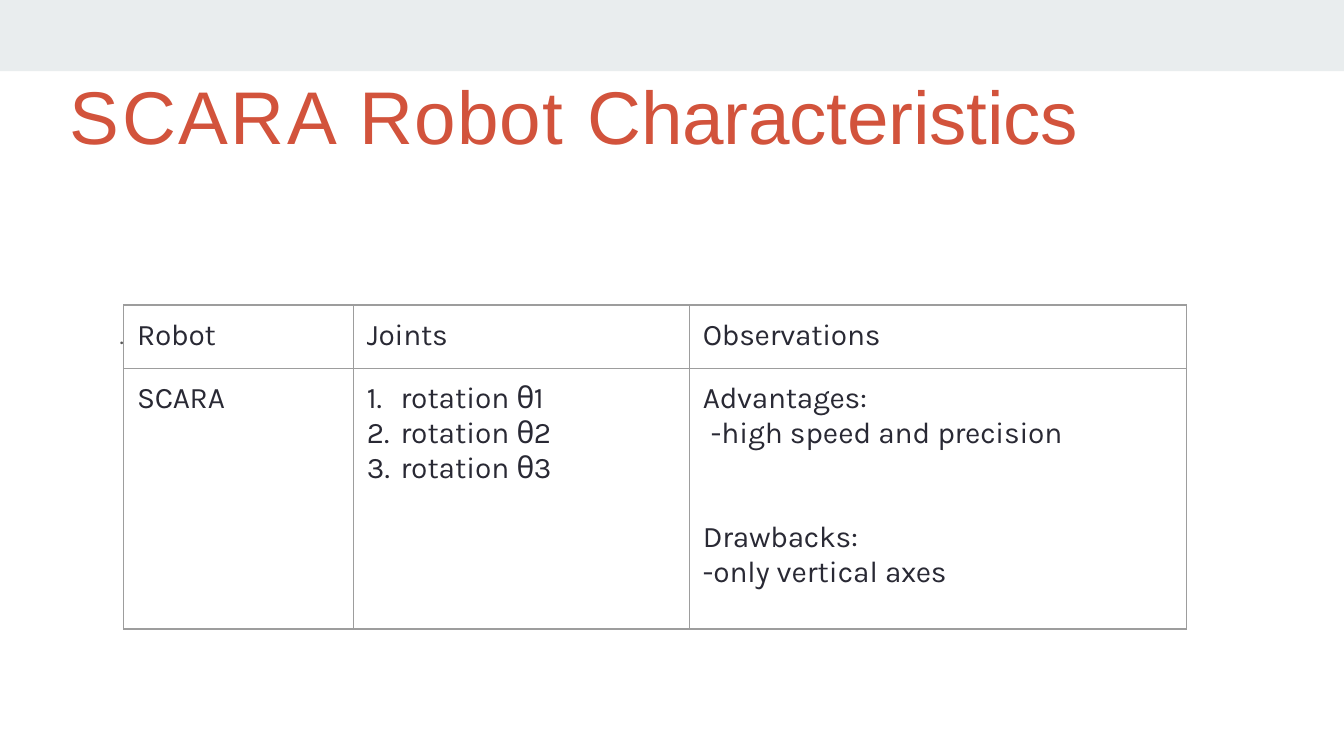
import lxml.etree
import pptx
import pptx.dml.color
import pptx.enum.shapes
import pptx.enum.text
import pptx.oxml.ns
import pptx.util

Inches = pptx.util.Inches
Pt = pptx.util.Pt


def rgb(value):
    return pptx.dml.color.RGBColor.from_string(value)


def add_xml(parent, tag, **attrs):
    return lxml.etree.SubElement(parent, pptx.oxml.ns.qn(tag), attrs)


class SlideBuilder:
    """Holds the style and the current slide."""

    band, red, ink, dot, rule = "E9EDEE", "D2533C", "292934", "595959", "9D9D9D"
    heading_font, body_font = "Arial", "Karla"

    def __init__(self, s):
        self.s = s

    def rectangle(self, x, y, w, h, color):
        kind = pptx.enum.shapes.MSO_SHAPE.RECTANGLE
        sp = self.s.shapes.add_shape(kind, Inches(x), Inches(y), Inches(w), Inches(h))
        sp.shadow.inherit = False
        sp.fill.solid()
        sp.fill.fore_color.rgb = rgb(color)
        sp.line.fill.background()

    def paragraph(self, p, runs, size, font, color, left=0.1, hang=0, before=0, numbered=False):
        p.space_before = Pt(before)
        pPr = p._p.get_or_add_pPr()
        pPr.set("marL", str(Inches(left)))
        pPr.set("indent", str(Inches(-hang)))
        if numbered:
            add_xml(pPr, "a:buAutoNum", type="arabicPeriod")
        for text, spacing in runs:
            r = p.add_run()
            r.text = text
            r.font.size = Pt(size)
            r.font.name = font
            r.font.color.rgb = rgb(color)
            r._r.get_or_add_rPr().set("spc", str(round(spacing * 100)))

    def text(self, x, y, w, h, runs, size, font, color, anchor, **layout):
        sp = self.s.shapes.add_textbox(Inches(x), Inches(y), Inches(w), Inches(h))
        tf = sp.text_frame
        tf.word_wrap = True
        tf.vertical_anchor = anchor
        tf.margin_left = tf.margin_right = tf.margin_bottom = 0
        tf.margin_top = Inches(0.01)
        self.paragraph(tf.paragraphs[0], runs, size, font, color, **layout)

    def cell(self, cell, paragraphs, fill):
        cell.margin_left = cell.margin_right = cell.margin_bottom = 0
        cell.margin_top = Inches(0.1)
        tcPr = cell._tc.get_or_add_tcPr()
        for side in ("L", "R", "T", "B"):
            ln = add_xml(tcPr, f"a:ln{side}", w=str(Pt(0.75)))
            add_xml(add_xml(ln, "a:solidFill"), "a:srgbClr", val=self.rule)
        if fill:
            cell.fill.solid()
            cell.fill.fore_color.rgb = rgb(fill)
        else:
            cell.fill.background()
        tf = cell.text_frame
        for i, (runs, layout) in enumerate(paragraphs):
            p = tf.add_paragraph() if i else tf.paragraphs[0]
            layout = layout if i else {"before": 6.8, **layout}
            self.paragraph(p, runs, 16, self.body_font, self.ink, **layout)

    def table(self, x, y, widths, heights, rows, fills):
        frame = self.s.shapes.add_table(len(heights), len(widths), Inches(x), Inches(y),
                                        Inches(sum(widths)), Inches(sum(heights)))
        table = frame.table
        table.first_row = table.horz_banding = False
        for column, width in zip(table.columns, widths):
            column.width = Inches(width)
        for row, height, contents, fill in zip(table.rows, heights, rows, fills):
            row.height = Inches(height)
            for cell, paragraphs in zip(row.cells, contents):
                self.cell(cell, paragraphs, fill)


def main():
    prs = pptx.Presentation()
    prs.slide_width = Inches(10)
    prs.slide_height = prs.slide_width * 9 // 16
    slide = SlideBuilder(prs.slides.add_slide(prs.slide_layouts[6]))
    anchors = pptx.enum.text.MSO_ANCHOR

    slide.rectangle(0, 0, 10, 0.53, slide.band)
    title = [("SCARA ", 1.4), ("Robot ", 0.8), ("Characteristics", -0.1)]
    slide.text(0.5, 0.44, 9, 0.81, title, 40, slide.heading_font, slide.red,
               anchors.MIDDLE, left=0.02, before=1.1)
    slide.text(0.88, 2.37, 0.08, 0.24, [(".", -0.5)], 13, slide.body_font, slide.dot,
               anchors.TOP, left=0.01, before=0.9)

    header = [[([(name, -0.1)], {})] for name in ("Robot", "Joints", "Observations")]
    numbered = {"left": 0.35, "hang": 0.25, "numbered": True}
    joints = [([("rotation ", 0), (f"θ{n}", -0.2)], numbered) for n in range(1, 4)]
    observations = [
        ([("Advantages:", -0.1)], {}),
        ([("-", -0.2), ("high speed and ", 0), ("precision", -0.1)], {"left": 0.16}),
        ([("Drawbacks:", -0.1)], {"before": 37}),
        ([("-", -0.2), ("only vertical ", 0), ("axes", -0.2)], {}),
    ]
    body = [[([("SCARA", -0.1)], {})], joints, observations]
    slide.table(0.92, 2.27, [1.71, 2.5, 3.7], [0.47, 1.94], [header, body], [None, "FFFFFF"])
    prs.save("out.pptx")


if __name__ == "__main__":
    main()
